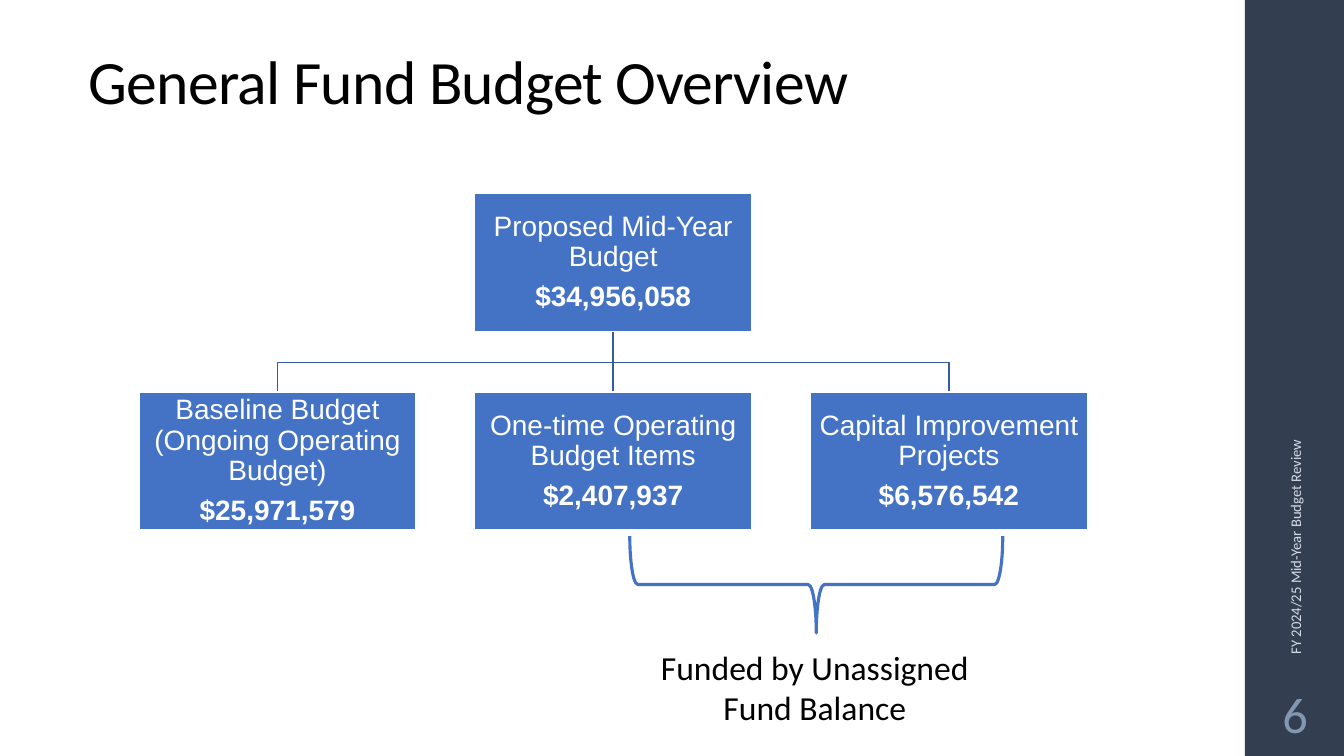
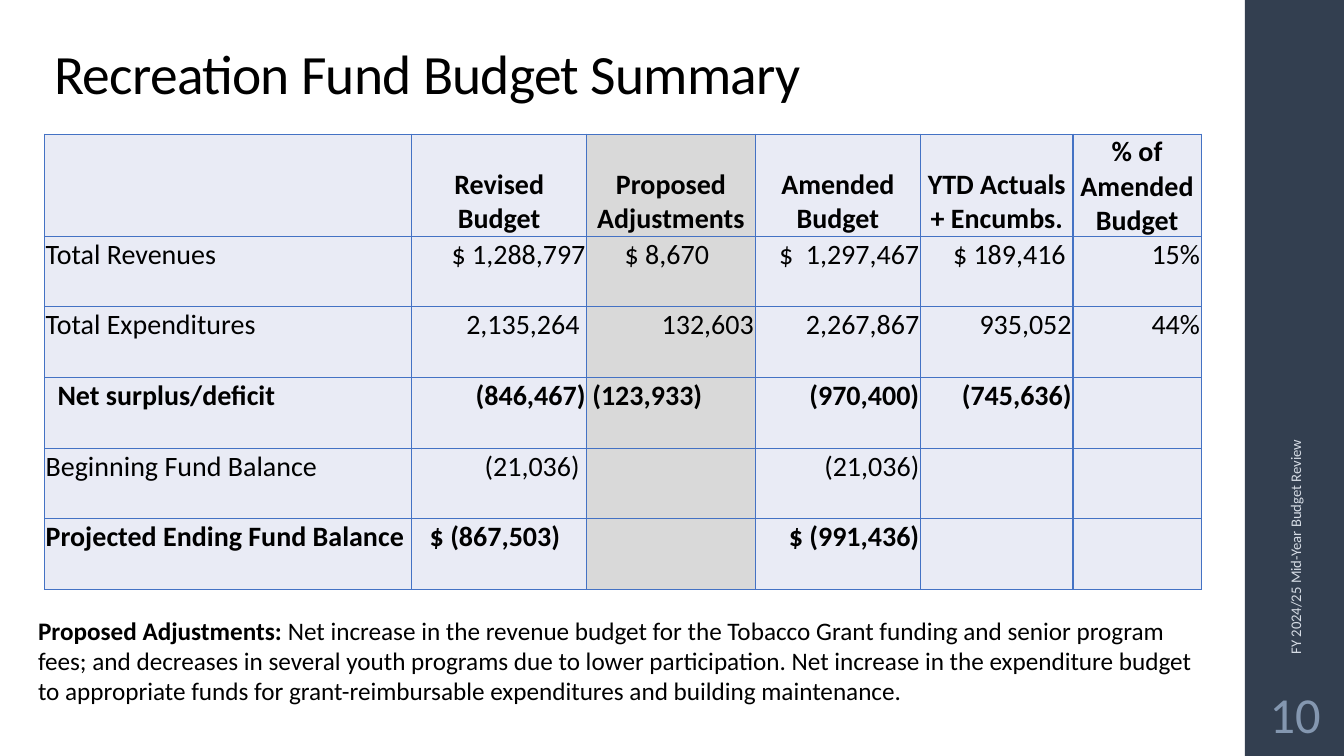
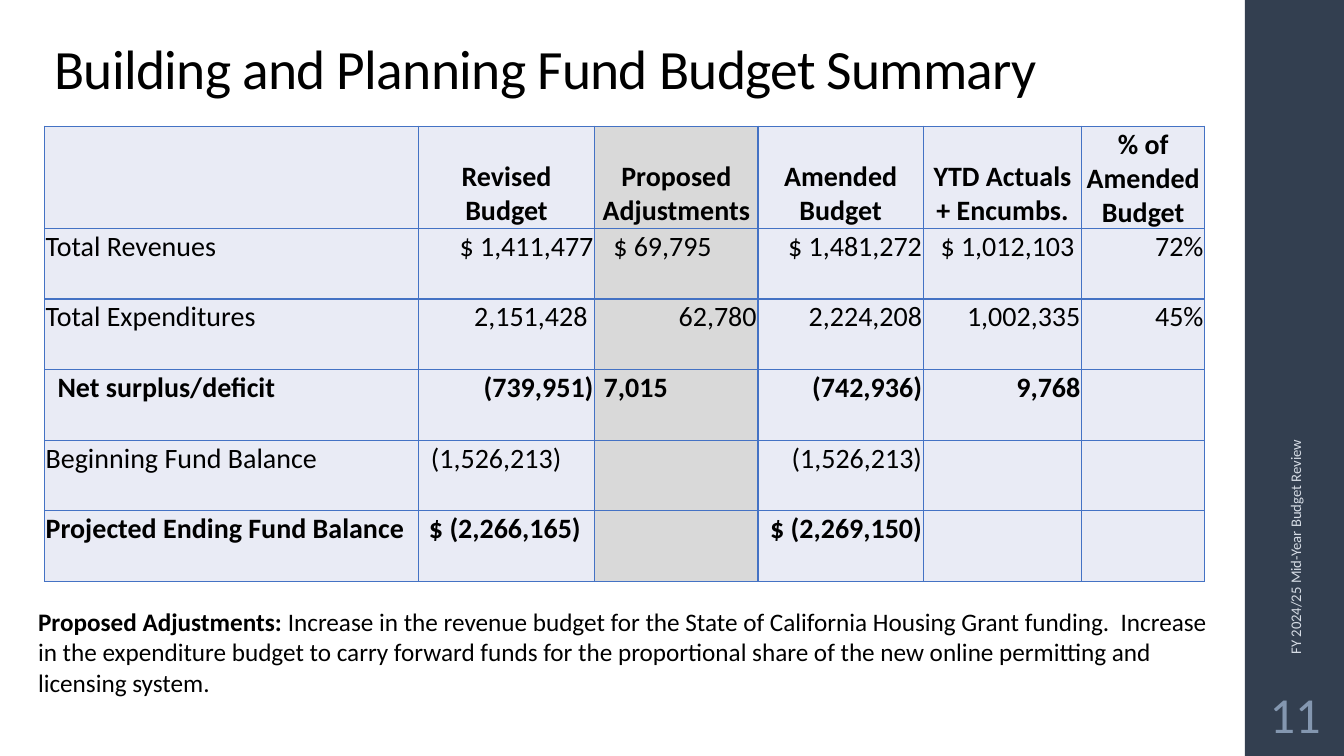
from dataclasses import dataclass
from typing import Optional, Sequence

from lxml.etree import SubElement
from pptx import Presentation
from pptx.dml.color import RGBColor
from pptx.enum.shapes import MSO_CONNECTOR as Conn, MSO_SHAPE as Shape
from pptx.enum.text import MSO_ANCHOR as Anchor, MSO_AUTO_SIZE as AutoSize, PP_ALIGN as Align
from pptx.oxml.ns import qn
from pptx.slide import Slide
from pptx.util import Cm, Pt

BAND, FOOTER, NUMBER = "333F50", "D6DCE5", "8497B0"
BLUE, LINK, BLACK, WHITE = "4472C4", "365B9D", "000000", "FFFFFF"
CELL, CELL_ADJUSTED = "E9EBF5", "D9D9D9"
BODY_FONT, BOX_FONT = "Calibri", "Arial"
SLIDE_W, SLIDE_H, BAND_X = 33.87, 19.05, 31.37

BOX_W, BOX_H, BOX_X, BOX_PITCH = 6.99, 3.48, 3.5, 8.46
TOP_Y, CHILD_Y, BUS_Y = 4.88, 9.88, 9.14

HEADINGS = ("", "Revised Budget", "Proposed Adjustments", "Amended Budget",
            "YTD Actuals + Encumbs.", "% of Amended Budget")
ADJUSTED_COLUMN = 2
HEADER_H, ROW_H, CELL_PAD = 2.08, 1.78, 0.03


@dataclass(frozen=True)
class Box:
    label: str
    amount: str


@dataclass(frozen=True)
class Entry:
    """A table figure and its distance in cm from the right cell edge."""
    text: str = ""
    pad: float = CELL_PAD


@dataclass(frozen=True)
class Row:
    label: str
    entries: Sequence[Entry]
    bold: bool = False
    indent: float = CELL_PAD


@dataclass(frozen=True)
class FundSummary:
    number: int
    title: str
    title_h: float
    table_y: float
    note_y: float
    widths: Sequence[float]
    rows: Sequence[Row]
    note: str


TOTAL = Box("Proposed Mid-Year Budget", "$34,956,058")
PARTS = (
    Box("Baseline Budget (Ongoing Operating Budget)", "$25,971,579"),
    Box("One-time Operating Budget Items", "$2,407,937"),
    Box("Capital Improvement Projects", "$6,576,542"),
)


def fund_rows(revenues: Sequence[Entry], expenditures: Sequence[Entry], net: Sequence[Entry],
              beginning: Sequence[Entry], ending: Sequence[Entry]) -> tuple[Row, ...]:
    return (
        Row("Total Revenues", revenues),
        Row("Total Expenditures", expenditures),
        Row("Net surplus/deficit", net, bold=True, indent=0.33),
        Row("Beginning Fund Balance", beginning),
        Row("Projected Ending Fund Balance", ending, bold=True),
    )


FUNDS = (
    FundSummary(
        10, "Recreation Fund Budget Summary", 1.5, 3.38, 15.37,
        (9.25, 4.42, 4.24, 4.17, 3.84, 3.23),
        fund_rows(
            (Entry("$ 1,288,797"), Entry("$ 8,670", 1.16), Entry("$  1,297,467"),
             Entry("$ 189,416", 0.18), Entry("15%")),
            (Entry("2,135,264", 0.18), Entry("132,603"), Entry("2,267,867"),
             Entry("935,052"), Entry("44%")),
            (Entry("(846,467)"), Entry("(123,933)", 1.33), Entry("(970,400)"),
             Entry("(745,636)"), Entry()),
            (Entry("(21,036)", 0.18), Entry(), Entry("(21,036)"), Entry(), Entry()),
            (Entry("$ (867,503)", 0.67), Entry(), Entry("$ (991,436)"), Entry(), Entry()),
        ),
        "Net increase in the revenue budget for the Tobacco Grant funding and senior program "
        "fees; and decreases in several youth programs due to lower participation. Net increase "
        "in the expenditure budget to appropriate funds for grant-reimbursable expenditures and "
        "building maintenance.",
    ),
    FundSummary(
        11, "Building and Planning Fund Budget Summary", 1.37, 3.18, 15.16,
        (9.42, 4.45, 4.11, 4.17, 3.99, 3.1),
        fund_rows(
            (Entry("$ 1,411,477"), Entry("$ 69,795", 1.16), Entry("$ 1,481,272"),
             Entry("$ 1,012,103", 0.18), Entry("72%")),
            (Entry("2,151,428", 0.18), Entry("62,780"), Entry("2,224,208"),
             Entry("1,002,335"), Entry("45%")),
            (Entry("(739,951)"), Entry("7,015", 2.27), Entry("(742,936)"),
             Entry("9,768"), Entry()),
            (Entry("(1,526,213)", 0.84), Entry(), Entry("(1,526,213)"), Entry(), Entry()),
            (Entry("$ (2,266,165)", 0.35), Entry(), Entry("$ (2,269,150)"), Entry(), Entry()),
        ),
        "Increase in the revenue budget for the State of California Housing Grant funding.  "
        "Increase in the expenditure budget to carry forward funds for the proportional share "
        "of the new online permitting and licensing system.",
    ),
)


def rgb(color: str) -> RGBColor:
    return RGBColor.from_string(color)


def add_run(p, text: str, size: float, color: str = BLACK, bold: bool = False,
            font: str = BODY_FONT) -> None:
    r = p.add_run()
    r.text = text
    r.font.size, r.font.name, r.font.bold = Pt(size), font, bold
    r.font.color.rgb = rgb(color)


def set_insets(target, left: float, top: float, right: float, bottom: float) -> None:
    target.margin_left, target.margin_top = Cm(left), Cm(top)
    target.margin_right, target.margin_bottom = Cm(right), Cm(bottom)


def add_text_box(slide: Slide, x: float, y: float, w: float, h: float,
                 anchor: Anchor = Anchor.TOP):
    sp = slide.shapes.add_textbox(Cm(x), Cm(y), Cm(w), Cm(h))
    sp.text_frame.word_wrap = True
    sp.text_frame.vertical_anchor = anchor
    return sp


def add_plain_shape(slide: Slide, kind: Shape, x: float, y: float, w: float, h: float,
                    fill: Optional[str], line: Optional[str], line_w: float = 1.1):
    sp = slide.shapes.add_shape(kind, Cm(x), Cm(y), Cm(w), Cm(h))
    sp.shadow.inherit = False
    if fill:
        sp.fill.solid()
        sp.fill.fore_color.rgb = rgb(fill)
    else:
        sp.fill.background()
    if line:
        sp.line.color.rgb = rgb(line)
        sp.line.width = Pt(line_w)
    else:
        sp.line.fill.background()
    return sp


def add_layout_band(prs: Presentation, layout) -> None:
    """Put the side band on the layout, behind its placeholders."""
    slide = prs.slides[0]
    band = add_plain_shape(slide, Shape.RECTANGLE, BAND_X, 0, SLIDE_W - BAND_X, SLIDE_H,
                           BAND, None)
    layout.shapes.element.insert(2, band.element)


def add_slide(prs: Presentation, number: int, title: str, x: float, y: float, h: float,
              size: float) -> Slide:
    layout = prs.slide_layouts[5]
    slide = prs.slides.add_slide(layout)
    if len(prs.slides) == 1:
        add_layout_band(prs, layout)

    sp = slide.shapes.title
    sp.left, sp.top, sp.width, sp.height = Cm(x), Cm(y), Cm(26.92), Cm(h)
    tf = sp.text_frame
    tf.auto_size, tf.vertical_anchor = AutoSize.NONE, Anchor.BOTTOM
    p = tf.paragraphs[0]
    p.alignment, p.line_spacing = Align.LEFT, 0.9
    add_run(p, title, size)
    for props in sp.element.iter(qn("a:rPr")):
        props.set("spc", "-50")

    footer = add_text_box(slide, 27.66, 11.25, 9.96, 1.02, Anchor.MIDDLE)
    footer.rotation = 270
    add_run(footer.text_frame.paragraphs[0], "FY 2024/25 Mid-Year Budget Review", 10.5, FOOTER)

    tf = add_text_box(slide, BAND_X, 17.15, 2.54, 1.65, Anchor.MIDDLE).text_frame
    set_insets(tf, 0.13, 0.13, 0.13, 0.13)
    tf.paragraphs[0].alignment = Align.CENTER
    add_run(tf.paragraphs[0], str(number), 36, NUMBER)
    return slide


def add_box(slide: Slide, box: Box, x: float, y: float) -> None:
    sp = add_plain_shape(slide, Shape.RECTANGLE, x, y, BOX_W, BOX_H, BLUE, WHITE)
    tf = sp.text_frame
    tf.word_wrap, tf.vertical_anchor = True, Anchor.MIDDLE
    set_insets(tf, 0.03, 0.03, 0.03, 0.03)
    for p, text, bold in ((tf.paragraphs[0], box.label, False),
                          (tf.add_paragraph(), box.amount, True)):
        p.alignment, p.line_spacing, p.space_after = Align.CENTER, 0.9, Pt(7)
        add_run(p, text, 20, WHITE, bold, BOX_FONT)


def add_link(slide: Slide, start_x: float, end_x: float) -> None:
    """Join the bottom of the top box to the top of a lower box."""
    start_y = TOP_Y + BOX_H
    if start_x == end_x:
        link = slide.shapes.add_connector(Conn.STRAIGHT, Cm(start_x), Cm(start_y),
                                          Cm(end_x), Cm(CHILD_Y))
        SubElement(link.element.spPr, qn("a:effectLst"))
    else:
        outline = slide.shapes.build_freeform(Cm(start_x), Cm(start_y))
        corners = ((start_x, BUS_Y), (end_x, BUS_Y), (end_x, CHILD_Y))
        outline.add_line_segments([(Cm(x), Cm(y)) for x, y in corners], close=False)
        link = outline.convert_to_shape()
        link.fill.background()
        link.shadow.inherit = False
    link.line.color.rgb = rgb(LINK)
    link.line.width = Pt(1.1)


def add_overview(prs: Presentation) -> None:
    slide = add_slide(prs, 6, "General Fund Budget Overview", 1.98, 0.56, 2.54, 44)
    lefts = [BOX_X + i * BOX_PITCH for i in range(len(PARTS))]
    top_x = lefts[1]
    for x in lefts:
        add_link(slide, top_x + BOX_W / 2, x + BOX_W / 2)
    add_box(slide, TOTAL, top_x, TOP_Y)
    for box, x in zip(PARTS, lefts):
        add_box(slide, box, x, CHILD_Y)

    brace = add_plain_shape(slide, Shape.RIGHT_BRACE, 19.35, 10.03, 2.44, 9.4, None, BLUE, 2.25)
    brace.rotation = 90
    p = add_text_box(slide, 15.67, 16.18, 9.73, 2.31).text_frame.paragraphs[0]
    p.alignment = Align.CENTER
    add_run(p, "Funded by Unassigned Fund Balance", 24)


def fill_cell(cell, column: int, text: str, align: Align, bold: bool,
              left: float = CELL_PAD, right: float = CELL_PAD,
              anchor: Anchor = Anchor.TOP) -> None:
    cell.fill.solid()
    cell.fill.fore_color.rgb = rgb(CELL_ADJUSTED if column == ADJUSTED_COLUMN else CELL)
    cell.vertical_anchor = anchor
    set_insets(cell, left, CELL_PAD, right, 0)
    if text:
        p = cell.text_frame.paragraphs[0]
        p.alignment = align
        add_run(p, text, 20, bold=bold)


def add_cell_borders(frame) -> None:
    for props in frame.element.iter(qn("a:tcPr")):
        for i, side in enumerate(("a:lnL", "a:lnR", "a:lnT", "a:lnB")):
            line = SubElement(props, qn(side), w=str(Pt(1)))
            fill = SubElement(line, qn("a:solidFill"))
            SubElement(fill, qn("a:srgbClr"), val=BLUE)
            props.insert(i, line)


def add_fund_table(slide: Slide, fund: FundSummary) -> None:
    count = len(fund.rows)
    frame = slide.shapes.add_table(count + 1, len(HEADINGS), Cm(1.12), Cm(fund.table_y),
                                   Cm(sum(fund.widths)), Cm(HEADER_H + count * ROW_H))
    table = frame.table
    table.first_row = table.horz_banding = False
    for column, width in zip(table.columns, fund.widths):
        column.width = Cm(width)
    for i, row in enumerate(table.rows):
        row.height = Cm(ROW_H if i else HEADER_H)

    for c, heading in enumerate(HEADINGS):
        fill_cell(table.cell(0, c), c, heading, Align.CENTER, True, anchor=Anchor.BOTTOM)
    for i, row in enumerate(fund.rows, 1):
        fill_cell(table.cell(i, 0), 0, row.label, Align.LEFT, row.bold, left=row.indent)
        for c, entry in enumerate(row.entries, 1):
            fill_cell(table.cell(i, c), c, entry.text, Align.RIGHT, row.bold, right=entry.pad)
    add_cell_borders(frame)


def add_fund_summary(prs: Presentation, fund: FundSummary) -> None:
    slide = add_slide(prs, fund.number, fund.title, 1.12, 1.32, fund.title_h, 39.6)
    add_fund_table(slide, fund)
    p = add_text_box(slide, 0.71, fund.note_y, 30.25, 2.57).text_frame.paragraphs[0]
    add_run(p, "Proposed Adjustments: ", 18, bold=True)
    add_run(p, fund.note, 18)


def main() -> None:
    prs = Presentation()
    prs.slide_width, prs.slide_height = Cm(SLIDE_W), Cm(SLIDE_H)
    add_overview(prs)
    for fund in FUNDS:
        add_fund_summary(prs, fund)
    prs.save("out.pptx")


if __name__ == "__main__":
    main()
